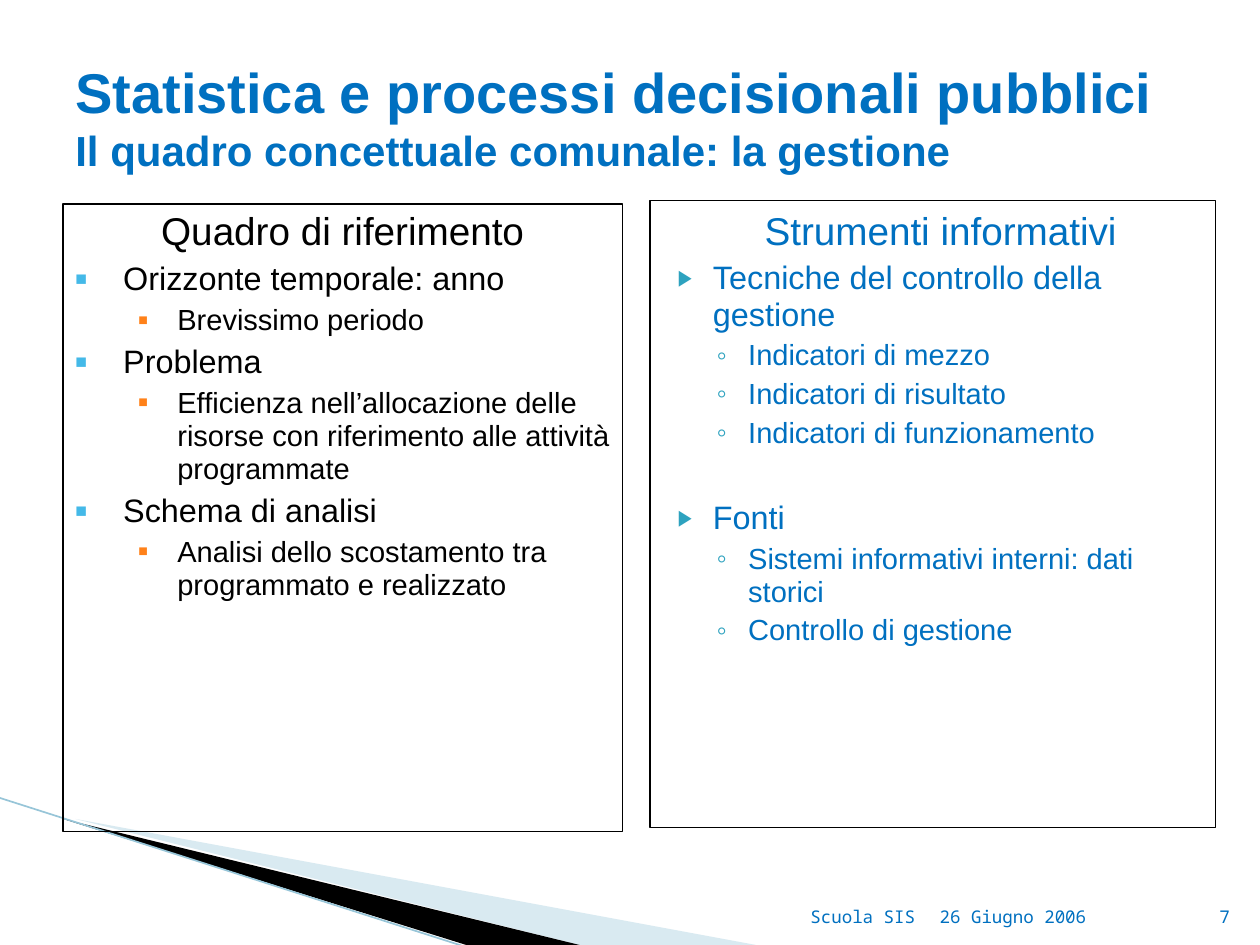
from lxml.etree import SubElement
from pptx import Presentation
from pptx.dml.color import RGBColor
from pptx.enum.shapes import MSO_CONNECTOR, MSO_SHAPE
from pptx.enum.text import MSO_ANCHOR, PP_ALIGN
from pptx.oxml.ns import qn
from pptx.util import Inches, Pt

COLUMNS, ROWS = 100, 75  # grid of the slide
CELL = Inches(0.1)
BLUE, BLACK, TEAL = "0070C0", "000000", "2DA2BF"

# Per level: left margin, first-line indent (cells), bullet, colour, size %
LEFT_LEVELS = [(3.8, -3.8, "■", "44B9E8", 60), (8.1, -3.1, "■", "FF8119", 55)]
RIGHT_LEVELS = [(4, -2.8, "▶", TEAL, 68), (6.8, -2.5, "◦", TEAL, 100)]
LEVEL_SIZES = [18.5, 16.6]
LEVEL_SPACES = [4, 3.2]
SECTION_GAP = 28.5

# Items: level, text, optional space before
LEFT_ITEMS = [
    (0, "Orizzonte temporale: anno"),
    (1, "Brevissimo periodo"),
    (0, "Problema"),
    (1, "Efficienza nell’allocazione delle risorse con riferimento alle attività programmate"),
    (0, "Schema di analisi"),
    (1, "Analisi dello scostamento tra programmato e realizzato"),
]
RIGHT_ITEMS = [
    (0, "Tecniche del controllo della gestione"),
    (1, "Indicatori di mezzo"),
    (1, "Indicatori di risultato"),
    (1, "Indicatori di funzionamento"),
    (0, "Fonti", SECTION_GAP),
    (1, "Sistemi informativi interni: dati storici"),
    (1, "Controllo di gestione"),
]


def cells(*values):
    return [round(value * CELL) for value in values]


def rgb(color):
    return RGBColor.from_string(color)


def style_font(font, size, color, name="Arial", bold=False):
    font.name, font.size, font.bold = name, Pt(size), bold
    font.color.rgb = rgb(color)


def set_indent(paragraph, left, first):
    properties = paragraph._p.get_or_add_pPr()
    margin, indent = cells(left, first)
    properties.set("marL", str(margin))
    properties.set("indent", str(indent))
    return properties


def set_bullet(properties, character, color, percent):
    bullet_color = SubElement(properties, qn("a:buClr"))
    SubElement(bullet_color, qn("a:srgbClr"), val=color)
    SubElement(properties, qn("a:buSzPct"), val=str(percent * 1000))
    SubElement(properties, qn("a:buFont"), typeface="Arial")
    SubElement(properties, qn("a:buChar"), char=character)


def add_wedge(slide, points, color, opacity=100):
    builder = slide.shapes.build_freeform(*points[0], scale=CELL)
    builder.add_line_segments(points[1:], close=True)
    wedge = builder.convert_to_shape()
    wedge.shadow.inherit = False
    wedge.fill.solid()
    wedge.fill.fore_color.rgb = rgb(color)
    wedge.line.fill.background()
    if opacity < 100:
        color_element = wedge._element.spPr.find(qn("a:solidFill"))[0]
        SubElement(color_element, qn("a:alpha"), val=str(opacity * 1000))


def add_corner_decoration(slide):
    add_wedge(slide, [(5.5, 65.1), (59.5, 75.1), (45.6, 75.1), (5.5, 65)], "A0CBDC", 40)
    add_wedge(slide, [(5.3, 64.9), (45.7, 75.1), (37.2, 75.2), (5.4, 65)], BLACK)
    edge = slide.shapes.add_connector(
        MSO_CONNECTOR.STRAIGHT, *cells(-0.1, 63.3, 37.1, 75.2))
    edge.line.color.rgb = rgb("97C5D8")
    edge.line.width = Pt(0.95)
    SubElement(edge._element.spPr, qn("a:effectLst"))


def add_text_box(slide, box, anchor):
    frame = slide.shapes.add_textbox(*cells(*box)).text_frame
    frame.word_wrap = True
    frame.vertical_anchor = anchor
    return frame.paragraphs[0]


def add_title(slide, box):
    paragraph = add_text_box(slide, box, MSO_ANCHOR.MIDDLE)
    title = paragraph.add_run()
    title.text = "Statistica e processi decisionali pubblici"
    paragraph.add_line_break()
    subtitle = paragraph.add_run()
    subtitle.text = "Il quadro concettuale comunale: la gestione"
    style_font(title.font, 32, BLUE, bold=True)
    style_font(subtitle.font, 24, BLUE, bold=True)


def add_panel(slide, box, heading, items, levels, color, heading_spacing):
    panel = slide.shapes.add_shape(MSO_SHAPE.RECTANGLE, *cells(*box))
    panel.shadow.inherit = False
    panel.fill.background()
    panel.line.color.rgb = rgb(BLACK)
    panel.line.width = Pt(0.75)
    frame = panel.text_frame
    frame.word_wrap = True
    frame.vertical_anchor = MSO_ANCHOR.TOP

    # Heading
    paragraph = frame.paragraphs[0]
    paragraph.text = heading
    set_indent(paragraph, *levels[0][:2])
    paragraph.alignment = PP_ALIGN.CENTER
    paragraph.line_spacing = heading_spacing
    style_font(paragraph.font, 22.1, color)

    # Bulleted items
    for level, text, *gap in items:
        paragraph = frame.add_paragraph()
        paragraph.text = text
        left, first, *bullet = levels[level]
        set_bullet(set_indent(paragraph, left, first), *bullet)
        paragraph.level = level
        paragraph.alignment = PP_ALIGN.LEFT
        paragraph.line_spacing = 0.95
        paragraph.space_before = Pt(gap[0] if gap else LEVEL_SPACES[level])
        style_font(paragraph.font, LEVEL_SIZES[level], color)


def add_footer(slide, top, height):
    parts = [
        (47.9, 25.7, "Scuola SIS", PP_ALIGN.RIGHT),
        (73.6, 21, "26 Giugno 2006", PP_ALIGN.LEFT),
        (94.6, 4, "7", PP_ALIGN.RIGHT),
    ]
    for left, width, text, alignment in parts:
        paragraph = add_text_box(slide, (left, top, width, height), MSO_ANCHOR.BOTTOM)
        paragraph.text = text
        paragraph.alignment = alignment
        style_font(paragraph.font, 10, BLUE, "Noto Sans Mono")


def main():
    presentation = Presentation()
    presentation.slide_width, presentation.slide_height = cells(COLUMNS, ROWS)
    slide = presentation.slides.add_slide(presentation.slide_layouts[6])
    add_corner_decoration(slide)
    add_title(slide, (5, 3, 90, 12.5))
    add_footer(slide, 70.1, 4)
    add_panel(slide, (51.6, 15.9, 44.9, 49.8), "Strumenti informativi",
              RIGHT_ITEMS, RIGHT_LEVELS, BLUE, 1.0)
    add_panel(slide, (5, 16.2, 44.4, 49.8), "Quadro di riferimento",
              LEFT_ITEMS, LEFT_LEVELS, BLACK, 0.95)
    presentation.save("out.pptx")


if __name__ == "__main__":
    main()
